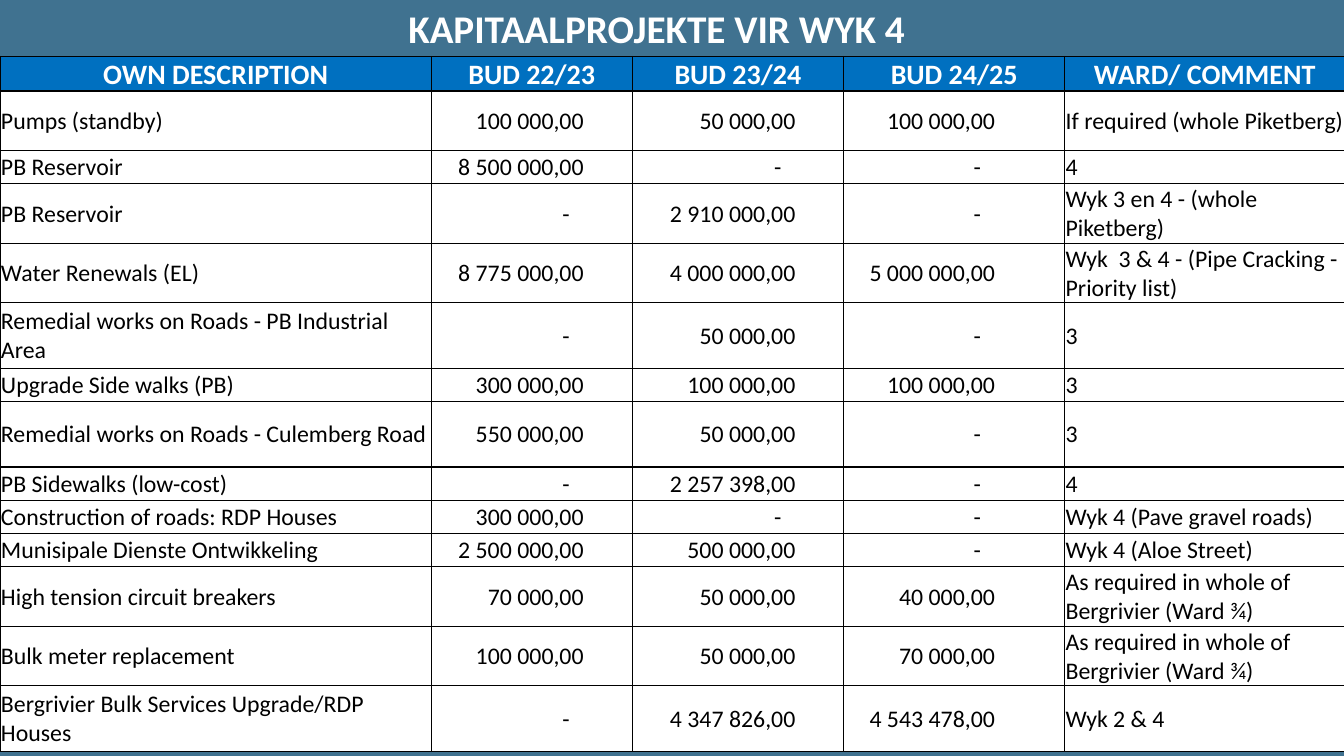
import pptx
import pptx.util
import pptx.dml.color
import pptx.enum.text
import pptx.oxml
import pptx.oxml.ns
from pptx.util import Inches

TITLE = "KAPITAALPROJEKTE VIR WYK 4"
HEADER = ("OWN DESCRIPTION", "BUD 22/23", "BUD 23/24", "BUD 24/25", "WARD/ COMMENT")
PROJECTS = [
    ("Pumps (standby)", "100 000,00", "50 000,00", "100 000,00", "If required (whole Piketberg)"),
    ("PB Reservoir", "8 500 000,00", "-", "-", "4"),
    ("PB Reservoir", "-", "2 910 000,00", "-", "Wyk 3 en 4 - (whole Piketberg)"),
    ("Water Renewals (EL)", "8 775 000,00", "4 000 000,00", "5 000 000,00",
     "Wyk  3 & 4 - (Pipe Cracking - Priority list)"),
    ("Remedial works on Roads - PB Industrial Area", "-", "50 000,00", "-", "3"),
    ("Upgrade Side walks (PB)", "300 000,00", "100 000,00", "100 000,00", "3"),
    ("Remedial works on Roads - Culemberg Road", "550 000,00", "50 000,00", "-", "3"),
    ("PB Sidewalks (low-cost)", "-", "2 257 398,00", "-", "4"),
    ("Construction of roads: RDP Houses", "300 000,00", "-", "-", "Wyk 4 (Pave gravel roads)"),
    ("Munisipale Dienste Ontwikkeling", "2 500 000,00", "500 000,00", "-", "Wyk 4 (Aloe Street)"),
    ("High tension circuit breakers", "70 000,00", "50 000,00", "40 000,00",
     "As required in whole of Bergrivier (Ward ¾)"),
    ("Bulk meter replacement", "100 000,00", "50 000,00", "70 000,00",
     "As required in whole of Bergrivier (Ward ¾)"),
    ("Bergrivier Bulk Services Upgrade/RDP Houses", "-", "4 347 826,00", "4 543 478,00", "Wyk 2 & 4"),
]
COL_WIDTHS = (4.28, 1.99, 2.1, 2.19, 2.78)
ROW_HEIGHTS = (0.34, 0.59, 0.33, 0.59, 0.59, 0.65, 0.33, 0.65, 0.33, 0.33, 0.33, 0.59, 0.59, 0.65)
AMOUNT_INSETS = {1: 0.48, 2: 0.48, 3: 0.69}
DASH_INSET = 0.14
CELL_INSET = 0.01

THEME = {
    "font": "Calibri", "back": "407290", "header": "0070C0", "cell": "FFFFFF",
    "light": "FFFFFF", "dark": "000000", "border": "000000",
    "title_size": 28, "header_size": 20, "body_size": 17,
}
ALIGN = pptx.enum.text.PP_ALIGN
ANCHOR = pptx.enum.text.MSO_ANCHOR


def rgb(name):
    return pptx.dml.color.RGBColor.from_string(THEME[name])


def write(tf, text, size="body_size", color="dark", bold=False, align=ALIGN.LEFT):
    p = tf.paragraphs[0]
    p.alignment = align
    r = p.add_run()
    r.text = text
    r.font.name = THEME["font"]
    r.font.size = pptx.util.Pt(THEME[size])
    r.font.bold = bold
    r.font.color.rgb = rgb(color)


def add_borders(cell):
    tc_pr = cell._tc.get_or_add_tcPr()
    for i, side in enumerate(("lnL", "lnR", "lnT", "lnB")):
        tc_pr.insert(i, pptx.oxml.parse_xml(
            f'<a:{side} {pptx.oxml.ns.nsdecls("a")} w="{pptx.util.Pt(1)}"><a:solidFill>'
            f'<a:srgbClr val="{THEME["border"]}"/></a:solidFill></a:{side}>'))


def add_title(s):
    title = s.shapes.title
    title.left, title.top = Inches(3.95), Inches(-0.01)
    title.width, title.height = Inches(5.19), Inches(0.57)
    tf = title.text_frame
    tf.word_wrap = False
    tf.auto_size = pptx.enum.text.MSO_AUTO_SIZE.SHAPE_TO_FIT_TEXT
    tf.vertical_anchor = ANCHOR.TOP
    write(tf, TITLE, size="title_size", color="light", bold=True)


def add_budget(s):
    rows = [HEADER] + PROJECTS
    table = s.shapes.add_table(len(rows), len(HEADER), 0, Inches(0.56),
                               Inches(sum(COL_WIDTHS)), Inches(sum(ROW_HEIGHTS))).table
    table.horz_banding = False
    for column, width in zip(table.columns, COL_WIDTHS):
        column.width = Inches(width)
    for i, (values, height) in enumerate(zip(rows, ROW_HEIGHTS)):
        table.rows[i].height = Inches(height)
        for j, text in enumerate(values):
            cell = table.cell(i, j)
            cell.vertical_anchor = ANCHOR.MIDDLE
            cell.margin_left = cell.margin_right = cell.margin_top = Inches(CELL_INSET)
            cell.margin_bottom = 0
            cell.fill.solid()
            cell.fill.fore_color.rgb = rgb("cell" if i else "header")
            add_borders(cell)
            if i == 0:
                write(cell.text_frame, text, size="header_size", color="light",
                      bold=True, align=ALIGN.CENTER)
            elif j in AMOUNT_INSETS:
                inset = AMOUNT_INSETS[j] + (DASH_INSET if text == "-" else 0)
                cell.margin_right = Inches(inset)
                write(cell.text_frame, text, align=ALIGN.RIGHT)
            else:
                write(cell.text_frame, text)


def main():
    prs = pptx.Presentation()
    prs.slide_width, prs.slide_height = Inches(13.33), Inches(7.5)
    s = prs.slides.add_slide(prs.slide_layouts.get_by_name("Title Only"))
    s.background.fill.solid()
    s.background.fill.fore_color.rgb = rgb("back")
    add_title(s)
    add_budget(s)
    prs.save("out.pptx")


if __name__ == "__main__":
    main()
